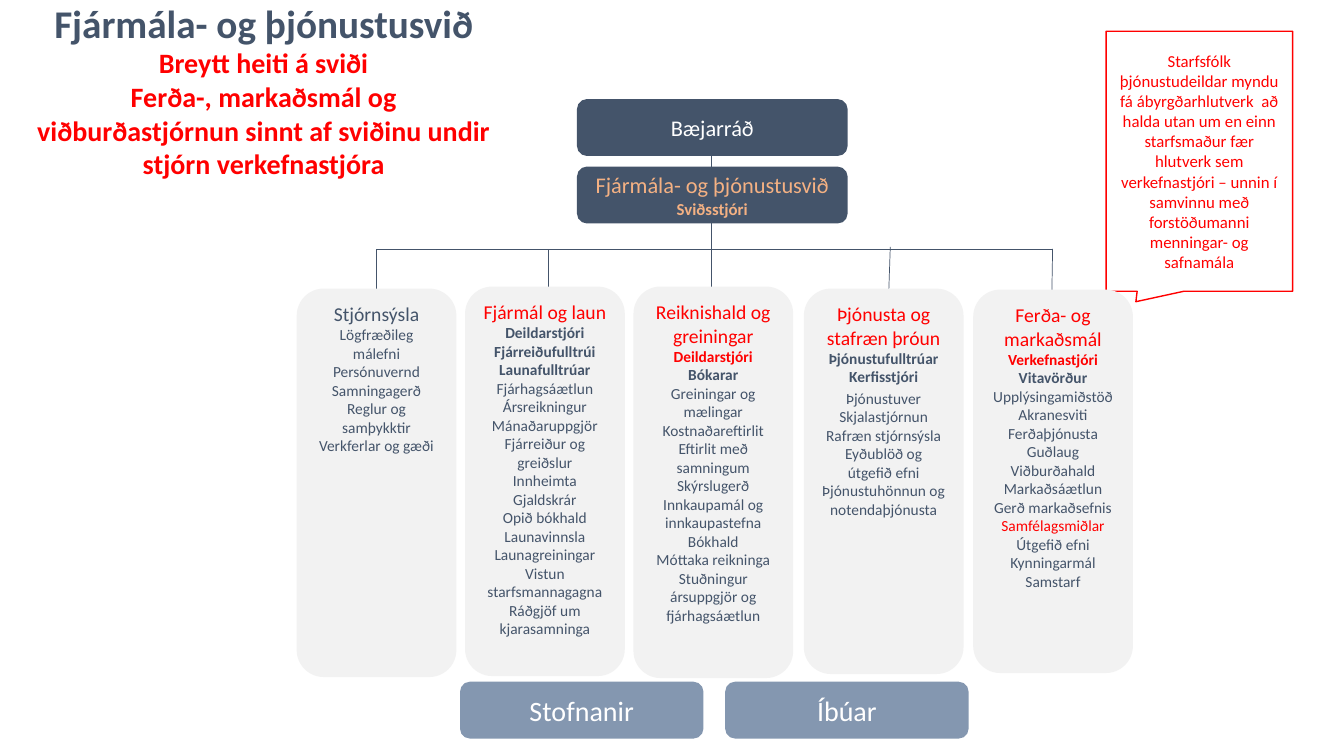
from dataclasses import dataclass, field

from lxml.etree import SubElement
from pptx import Presentation
from pptx.dml.color import RGBColor
from pptx.enum.shapes import MSO_CONNECTOR as Connector, MSO_SHAPE as Shape
from pptx.enum.text import MSO_ANCHOR as Anchor, MSO_AUTO_SIZE as AutoSize, PP_ALIGN as Align
from pptx.oxml.ns import qn
from pptx.util import Inches, Pt


def text_style(size, color, bold=False, after=0):
    return {"size": size, "color": color, "bold": bold, "after": after}


@dataclass
class Theme:
    font: str = "Calibri"
    navy: str = "44546A"
    steel: str = "8497B0"
    panel: str = "F2F2F2"
    white: str = "FFFFFF"
    red: str = "FF0000"
    text: dict = field(default_factory=lambda: {
        "title": text_style(28, "44546A", True),
        "subtitle": text_style(20, "FF0000", True),
        "council": text_style(16, "FFFFFF"),
        "division": text_style(16, "F4B183"),
        "director": text_style(12, "F4B183", True),
        "base": text_style(20, "FFFFFF"),
        "note": text_style(12, "FF0000"),
        "heading": text_style(14, "44546A"),
        "new heading": text_style(14, "FF0000"),
        "role": text_style(11, "44546A", True),
        "last role": text_style(11, "44546A", True, 2),
        "new role": text_style(11, "FF0000", True),
        "item": text_style(11, "44546A"),
        "new item": text_style(11, "FF0000"),
    })


class OrgChart:
    def __init__(self, slide, theme):
        self.slide = slide
        self.theme = theme

    def add_text(self, shape, blocks, **frame_format):
        """Fill a shape with (style name, line, line, ...) blocks."""
        frame = shape.text_frame
        for name, value in {"word_wrap": True, **frame_format}.items():
            setattr(frame, name, value)
        lines = [(style, line) for style, *group in blocks for line in group]
        for index, (style_name, line) in enumerate(lines):
            style = self.theme.text[style_name]
            paragraph = frame.paragraphs[0] if index == 0 else frame.add_paragraph()
            paragraph.alignment = Align.CENTER
            paragraph.space_after = Pt(style["after"])
            run = paragraph.add_run()
            run.text = line
            font_format = {"name": self.theme.font, "size": Pt(style["size"]), "bold": style["bold"]}
            for name, value in font_format.items():
                setattr(run.font, name, value)
            run.font.color.rgb = RGBColor.from_string(style["color"])

    def title(self, place, blocks):
        title = self.slide.shapes.title
        for name, value in zip(("left", "top", "width", "height"), place):
            setattr(title, name, Inches(value))
        self.add_text(title, blocks, vertical_anchor=Anchor.BOTTOM,
                      auto_size=AutoSize.NONE, margin_bottom=Inches(0.02))

    def box(self, place, fill, blocks, line=None, kind=Shape.ROUNDED_RECTANGLE, anchor=Anchor.MIDDLE):
        shape = self.slide.shapes.add_shape(kind, *map(Inches, place))
        shape.shadow.inherit = False
        shape.fill.solid()
        shape.fill.fore_color.rgb = RGBColor.from_string(fill)
        shape.line.color.rgb = RGBColor.from_string(line or fill)
        shape.line.width = Pt(1)
        self.add_text(shape, blocks, vertical_anchor=anchor)
        return shape

    def link(self, *ends):
        connector = self.slide.shapes.add_connector(Connector.STRAIGHT, *map(Inches, ends))
        connector.line.color.rgb = RGBColor.from_string(self.theme.navy)
        connector.line.width = Pt(0.5)
        SubElement(connector._element.spPr, qn("a:effectLst"))


# Departments: left, top, height, text blocks
DEPARTMENTS = [
    (2.95, 2.87, 3.84, [
        ("heading", "Stjórnsýsla"),
        ("item", "Lögfræðileg málefni", "Persónuvernd", "Samningagerð",
         "Reglur og samþykktir", "Verkferlar og gæði")]),
    (4.62, 2.85, 3.85, [
        ("new heading", "Fjármál og laun"),
        ("role", "Deildarstjóri", "Fjárreiðufulltrúi", "Launafulltrúar"),
        ("item", "Fjárhagsáætlun", "Ársreikningur", "Mánaðaruppgjör",
         "Fjárreiður og greiðslur", "Innheimta", "Gjaldskrár", "Opið bókhald",
         "Launavinnsla", "Launagreiningar", "Vistun starfsmannagagna",
         "Ráðgjöf um kjarasamninga")]),
    (6.29, 2.85, 3.87, [
        ("new heading", "Reiknishald og greiningar"),
        ("new role", "Deildarstjóri"),
        ("role", "Bókarar"),
        ("item", "Greiningar og mælingar", "Kostnaðareftirlit", "Eftirlit með samningum",
         "Skýrslugerð", "Innkaupamál og innkaupastefna", "Bókhald",
         "Móttaka reikninga", "Stuðningur ársuppgjör og fjárhagsáætlun")]),
    (7.98, 2.87, 3.81, [
        ("new heading", "Þjónusta og stafræn þróun"),
        ("role", "Þjónustufulltrúar"),
        ("last role", "Kerfisstjóri"),
        ("item", "Þjónustuver", "Skjalastjórnun", "Rafræn stjórnsýsla",
         "Eyðublöð og útgefið efni", "Þjónustuhönnun og notendaþjónusta")]),
    (9.66, 2.88, 3.79, [
        ("new heading", "Ferða- og markaðsmál"),
        ("new role", "Verkefnastjóri"),
        ("role", "Vitavörður"),
        ("item", "Upplýsingamiðstöð", "Akranesviti", "Ferðaþjónusta", "Guðlaug",
         "Viðburðahald", "Markaðsáætlun", "Gerð markaðsefnis"),
        ("new item", "Samfélagsmiðlar"),
        ("item", "Útgefið efni Kynningarmál", "Samstarf")]),
]

# Branch lines: x1, y1, x2, y2
LINKS = [
    (7.06, 3.07, 7.06, 1.54),
    (10.44, 2.47, 3.73, 2.47),
    (3.73, 3.09, 3.73, 2.47),
    (5.44, 3.07, 5.44, 2.47),
    (8.81, 3.04, 8.83, 2.45),
    (10.43, 3.06, 10.44, 2.47),
]


def main():
    presentation = Presentation()
    presentation.slide_width, presentation.slide_height = Inches(13.33), Inches(7.5)
    theme = Theme()
    chart = OrgChart(presentation.slides.add_slide(presentation.slide_layouts[5]), theme)

    # Title
    chart.title((0.26, 0.42, 4.71, 1.39), [
        ("title", "Fjármála- og þjónustusvið"),
        ("subtitle", "Breytt heiti á sviði",
         "Ferða-, markaðsmál og viðburðastjórnun sinnt af sviðinu undir stjórn verkefnastjóra")])

    # Branch lines, behind the boxes
    for ends in LINKS:
        chart.link(*ends)

    # Council and division
    chart.box((5.73, 0.99, 2.67, 0.55), theme.navy, [("council", "Bæjarráð")])
    chart.box((5.73, 1.66, 2.67, 0.55), theme.navy,
              [("division", "Fjármála- og þjónustusvið"), ("director", "Sviðsstjóri")])

    # Institutions and residents
    for left, label in ((4.57, "Stofnanir"), (7.2, "Íbúar")):
        chart.box((left, 6.77, 2.4, 0.55), theme.steel, [("base", label)])

    # Callout
    callout = chart.box(
        (10.97, 0.31, 1.85, 2.58), theme.white,
        [("note", "Starfsfólk þjónustudeildar myndu fá ábyrgðarhlutverk  að halda utan um en "
                  "einn starfsmaður fær hlutverk sem verkefnastjóri – unnin í samvinnu með "
                  "forstöðumanni menningar- og safnamála")],
        line=theme.red, kind=Shape.RECTANGULAR_CALLOUT)
    callout.adjustments[0], callout.adjustments[1] = -0.34, 0.54

    # Department columns
    for left, top, height, blocks in DEPARTMENTS:
        chart.box((left, top, 1.57, height), theme.panel, blocks, anchor=Anchor.TOP)

    presentation.save("out.pptx")


if __name__ == "__main__":
    main()
